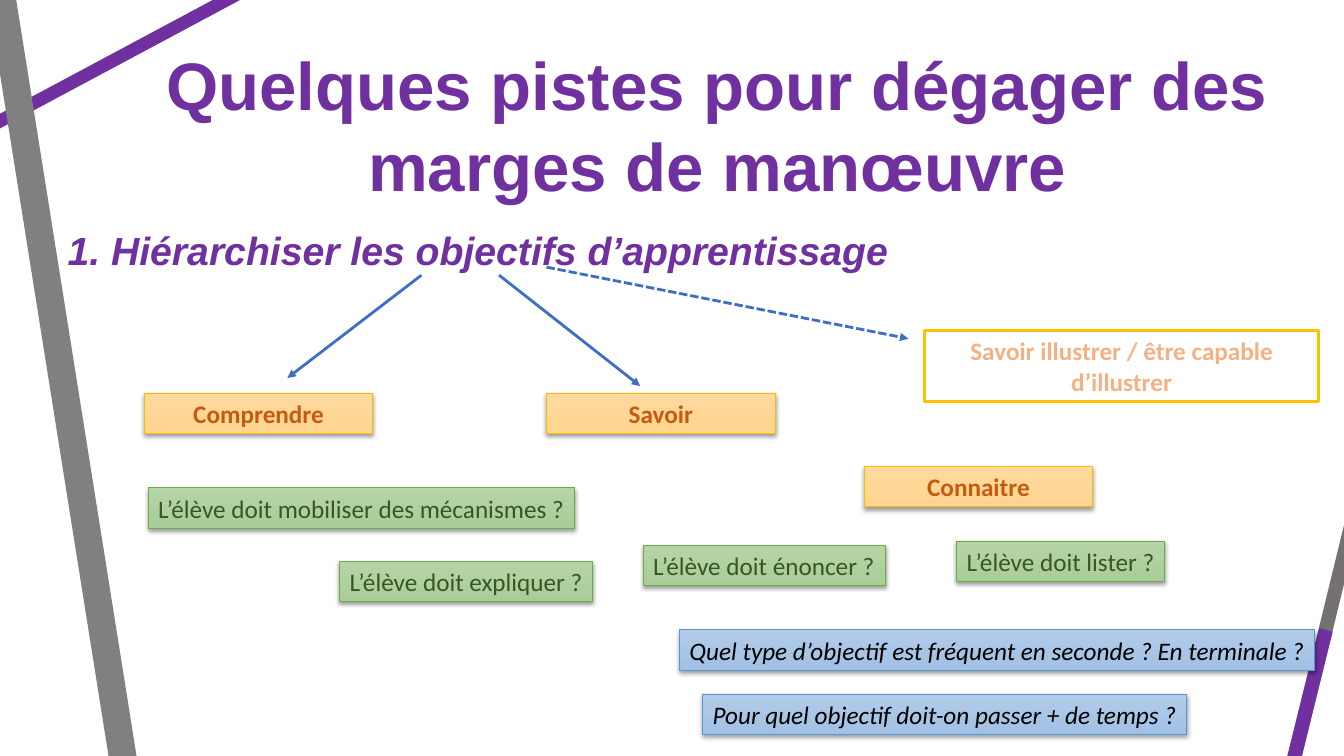
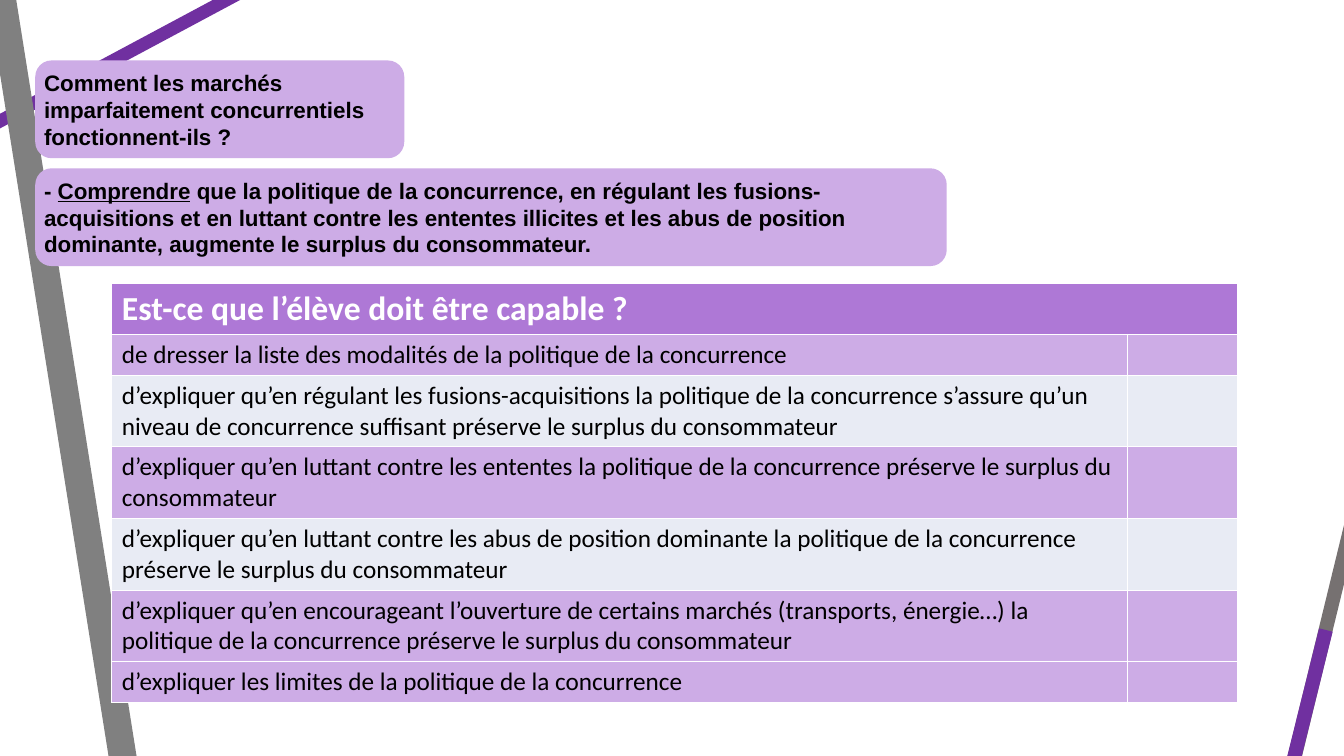
from lxml.etree import SubElement
from pptx import Presentation
from pptx.dml.color import RGBColor
from pptx.enum.dml import MSO_LINE
from pptx.enum.shapes import MSO_CONNECTOR, MSO_SHAPE
from pptx.enum.text import MSO_ANCHOR, MSO_AUTO_SIZE, PP_ALIGN
from pptx.oxml.ns import qn
from pptx.util import Emu, Pt

EMU_PER_PX = 9144  # 100 px to the inch
TITLE_AND_CONTENT, BLANK = 1, 6

COLOURS = {
    "purple": "7030A0", "grey": "808080", "dark grey": "767171",
    "lilac": "CDACE6", "violet": "AE78D6", "pale": "E8EBF4",
    "white": "FFFFFF", "black": "000000", "blue": "3F6FC3",
    "gold": "FFC000", "peach": "F4B183", "rust": "C55A11", "forest": "385623",
    "orange top": "FFDA9E", "orange bottom": "FFD590", "orange edge": "F9BC00",
    "green top": "B5D4A7", "green bottom": "A9CD99", "green edge": "6DAC43",
    "sky top": "B1CBE9", "sky bottom": "A2C1E4", "sky edge": "5698D3",
}

# start x, start y, end x, end y, colour, width in points
BANDS = [
    (-209, 232, 516, -156, "purple", 9.25),
    (0, -14, 126, 778, "grey", 19.75),
    (1226, 989, 1365, 419, "dark grey", 10),
    (1218, 1015, 1315, 625, "purple", 10),
]


def px(length):
    return Emu(length * EMU_PER_PX)


def rgb(name):
    return RGBColor.from_string(COLOURS[name])


class Slides:
    """Holds the deck, its style and the page being filled."""

    def __init__(self):
        self.deck = Presentation()
        self.deck.slide_width, self.deck.slide_height = px(1333), px(750)
        self.page = None

    def new_page(self, layout):
        self.page = self.deck.slides.add_slide(self.deck.slide_layouts[layout])
        for *ends, colour, width in BANDS:
            self.line(*ends, colour, width)

    def line(self, x1, y1, x2, y2, colour, width):
        line = self.page.shapes.add_connector(
            MSO_CONNECTOR.STRAIGHT, px(x1), px(y1), px(x2), px(y2))
        line.line.color.rgb = rgb(colour)
        line.line.width = Pt(width)
        SubElement(line._element.spPr, qn("a:effectLst"))
        return line

    def arrow(self, x1, y1, x2, y2, dashed=False):
        arrow = self.line(x1, y1, x2, y2, "blue", 2)
        if dashed:
            arrow.line.dash_style = MSO_LINE.SQUARE_DOT
        SubElement(arrow.line._get_or_add_ln(), qn("a:tailEnd"), type="triangle")

    def format(self, para, size, colour, font="Calibri", bold=False,
               italic=False, align=PP_ALIGN.LEFT):
        para.alignment = align
        for span in para.runs:
            span.font.name, span.font.size = font, Pt(size)
            span.font.bold, span.font.italic = bold, italic
            span.font.color.rgb = rgb(colour)

    def margins(self, frame, side, end):
        frame.margin_left = frame.margin_right = px(side)
        frame.margin_top = frame.margin_bottom = px(end)

    def fill_placeholder(self, box, text, left, top, width, height):
        box.left, box.top, box.width, box.height = map(px, (left, top, width, height))
        frame = box.text_frame
        frame.text = text
        frame.word_wrap = True
        frame.auto_size = MSO_AUTO_SIZE.NONE
        frame.vertical_anchor = MSO_ANCHOR.TOP
        return frame

    def title(self, text, *place):
        frame = self.fill_placeholder(self.page.shapes.title, text, *place)
        self.margins(frame, 4, 4)
        self.format(frame.paragraphs[0], 48, "purple", "Arial", bold=True,
                    align=PP_ALIGN.CENTER)

    def subtitle(self, text, *place):
        frame = self.fill_placeholder(self.page.placeholders[1], text, *place)
        para = frame.paragraphs[0]
        para.space_before = Pt(0)
        self.format(para, 28, "purple", "Arial", bold=True, italic=True)
        properties = para._p.get_or_add_pPr()
        properties.set("marL", "0")
        properties.set("indent", "0")
        SubElement(properties, qn("a:buNone"))

    def shape(self, kind, left, top, width, height):
        box = self.page.shapes.add_shape(kind, px(left), px(top), px(width), px(height))
        box.shadow.inherit = False
        return box

    def label(self, text, left, top, width, tint, colour, wrap=False, **style):
        """Add a one-line box with a soft gradient and a shadow."""
        box = self.shape(MSO_SHAPE.RECTANGLE, left, top, width, 40)
        box.fill.gradient()
        box.fill.gradient_angle = 270
        for stop, end in zip(box.fill.gradient_stops, ("top", "bottom")):
            stop.color.rgb = rgb(f"{tint} {end}")
        box.line.color.rgb = rgb(f"{tint} edge")
        box.line.width = Pt(0.75)
        effects = box._element.spPr.find(qn("a:effectLst"))
        shadow = SubElement(effects, qn("a:outerShdw"), blurRad="40000",
                            dist="20000", dir="5400000", rotWithShape="0")
        black = SubElement(shadow, qn("a:srgbClr"), val=COLOURS["black"])
        SubElement(black, qn("a:alpha"), val="38000")
        box.text_frame.text = text
        box.text_frame.word_wrap = wrap
        self.format(box.text_frame.paragraphs[0], 18, colour, **style)

    def goal(self, text, left, top):
        self.label(text, left, top, 227, "orange", "rust", wrap=True, bold=True,
                   align=PP_ALIGN.CENTER)

    def task(self, text, left, top, width):
        self.label(text, left, top, width, "green", "forest")

    def question(self, text, left, top, width):
        self.label(text, left, top, width, "sky", "black", italic=True)

    def outlined_goal(self, text, *place):
        box = self.shape(MSO_SHAPE.RECTANGLE, *place)
        box.fill.solid()
        box.fill.fore_color.rgb = rgb("white")
        box.line.color.rgb = rgb("gold")
        box.line.width = Pt(2)
        box.text_frame.text = text
        box.text_frame.word_wrap = True
        self.format(box.text_frame.paragraphs[0], 18, "peach", bold=True,
                    align=PP_ALIGN.CENTER)

    def card(self, spans, *place, underlined=None):
        """Add a rounded card; the span at index underlined is underlined."""
        box = self.shape(MSO_SHAPE.ROUNDED_RECTANGLE, *place)
        box.fill.solid()
        box.fill.fore_color.rgb = rgb("lilac")
        box.line.fill.background()
        frame = box.text_frame
        frame.word_wrap = True
        frame.vertical_anchor = MSO_ANCHOR.MIDDLE
        self.margins(frame, 4, 4)
        para = frame.paragraphs[0]
        for index, text in enumerate(spans):
            span = para.add_run()
            span.text = text
            span.font.underline = index == underlined
        self.format(para, 16, "black", "Arial", bold=True)

    def checklist(self, heading, items, left, top, widths, heights):
        """Add a table with a merged heading and an empty column to tick."""
        table = self.page.shapes.add_table(
            len(heights), len(widths), px(left), px(top),
            px(sum(widths)), px(sum(heights))).table
        table.horz_banding = False
        for column, width in zip(table.columns, widths):
            column.width = px(width)
        fills = ["violet"] + ["lilac", "pale"] * (len(items) // 2) + ["white"]
        fills[-2:] = ["lilac", "white"]
        for index, (text, fill) in enumerate(zip([heading] + items, fills)):
            table.rows[index].height = px(heights[index])
            for cell in table.rows[index].cells:
                cell.fill.solid()
                cell.fill.fore_color.rgb = rgb(fill)
            cell = table.cell(index, 0)
            cell.text = text
            style = (18, "black") if index else (24, "white")
            self.format(cell.text_frame.paragraphs[0], *style, bold=index == 0)
        table.cell(0, 0).merge(table.cell(0, 1))


def add_objectives(slides):
    slides.new_page(TITLE_AND_CONTENT)
    slides.title("Quelques pistes pour dégager des marges de manœuvre",
                 126, 39, 1171, 168)
    slides.subtitle("1. Hiérarchiser les objectifs d’apprentissage", 57, 219, 1220, 57)
    slides.arrow(418, 273, 285, 375)
    slides.arrow(495, 273, 635, 383)
    slides.arrow(542, 265, 901, 336, dashed=True)
    slides.goal("Comprendre", 143, 390)
    slides.goal("Savoir", 542, 390)
    slides.goal("Connaitre", 857, 463)
    slides.outlined_goal("Savoir illustrer / être capable d’illustrer", 917, 328, 391, 70)
    slides.task("L’élève doit mobiliser des mécanismes ?", 147, 484, 423)
    slides.task("L’élève doit expliquer ?", 337, 557, 251)
    slides.task("L’élève doit énoncer ?", 638, 541, 240)
    slides.task("L’élève doit lister ?", 949, 537, 206)
    slides.question("Quel type d’objectif est fréquent en seconde ? En terminale ?",
                    674, 625, 630)
    slides.question("Pour quel objectif doit-on passer + de temps ?", 697, 689, 480)


def add_competition(slides):
    slides.new_page(BLANK)
    slides.card(["Comment les marchés imparfaitement concurrentiels fonctionnent-ils ?"],
                35, 60, 366, 97)
    slides.card(["- ", "Comprendre",
                 " que la politique de la concurrence, en régulant les "
                 "fusions-acquisitions et en luttant contre les ententes illicites et "
                 "les abus de position dominante, augmente le surplus du consommateur."],
                35, 167, 904, 97, underlined=1)
    slides.checklist("Est-ce que l’élève doit être capable ?", [
        "de dresser la liste des modalités de la politique de la concurrence",
        "d’expliquer qu’en régulant les fusions-acquisitions la politique de la "
        "concurrence s’assure qu’un niveau de concurrence suffisant préserve le "
        "surplus du consommateur",
        "d’expliquer qu’en luttant contre les ententes la politique de la "
        "concurrence préserve le surplus du consommateur",
        "d’expliquer qu’en luttant contre les abus de position dominante la "
        "politique de la concurrence préserve le surplus du consommateur",
        "d’expliquer qu’en encourageant l’ouverture de certains marchés (transports, "
        "énergie…) la politique de la concurrence préserve le surplus du consommateur",
        "d’expliquer les limites de la politique de la concurrence",
    ], 111, 281, [1007, 110], [50, 40, 70, 70, 70, 70, 40])


def main():
    slides = Slides()
    add_objectives(slides)
    add_competition(slides)
    slides.deck.save("out.pptx")


if __name__ == "__main__":
    main()
